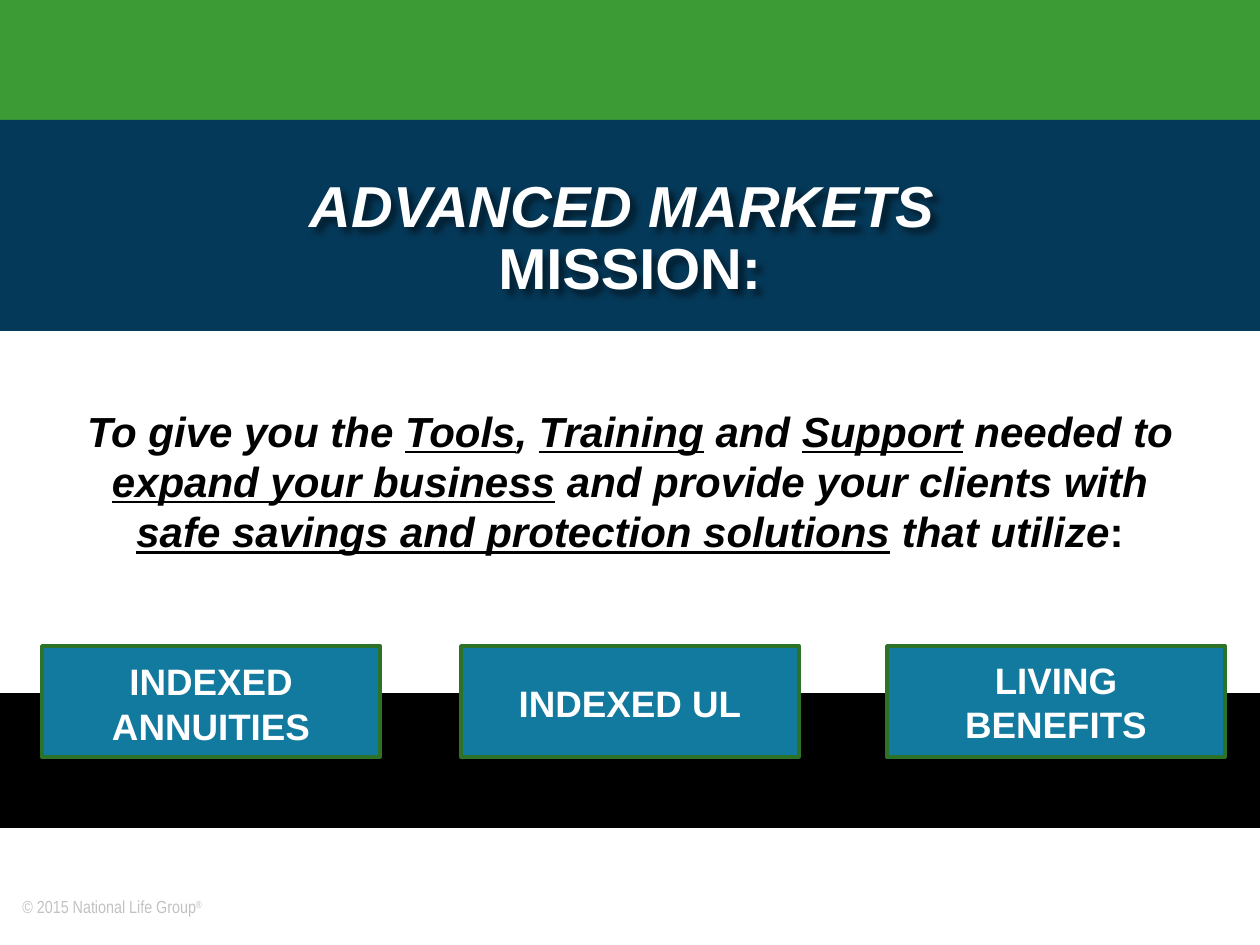
from lxml.etree import SubElement
from pptx import Presentation
from pptx.dml.color import RGBColor
from pptx.enum.shapes import MSO_SHAPE
from pptx.enum.text import MSO_ANCHOR, MSO_AUTO_SIZE, PP_ALIGN
from pptx.oxml.ns import qn
from pptx.util import Emu, Pt

PX = 914400 / 126
WHITE, BLACK, GREY = "FFFFFF", "000000", "C2C2C2"
GREEN, NAVY, TEAL, DARK_GREEN = "3D9B35", "053959", "127A9E", "2D7327"

LABEL = {"name": "Arial", "size": Pt(21), "bold": True}
TITLE = {"name": "Arial", "size": Pt(33), "bold": True}
MISSION = {"name": "Arial", "size": Pt(24), "bold": True, "italic": True}
FOOTER = {"name": "Arial Narrow", "size": Pt(10)}

# Each span is its text and what differs from the format of its box
MISSION_SPANS = [
    ("To give you the ", {}),
    ("Tools", {"underline": True}),
    (", ", {}),
    ("Training", {"underline": True}),
    (" and ", {}),
    ("Support", {"underline": True}),
    (" needed to ", {}),
    ("expand your business", {"underline": True}),
    (" and provide your clients with ", {}),
    ("safe savings and protection solutions", {"underline": True}),
    (" that utilize", {}),
    (":", {"italic": False}),
]

# Solution card left edge, then the place and lines of its label
CARDS = [
    (42, (98, 653, 226, 102), ["INDEXED", "ANNUITIES"], False),
    (461, (505, 675, 250, 57), ["INDEXED UL"], False),
    (887, (951, 652, 210, 102), ["LIVING", "BENEFITS"], True),
]


def px(*lengths):
    return [Emu(round(length * PX)) for length in lengths]


def color(value):
    return RGBColor.from_string(value)


def add_panel(page, place, fill, line=None):
    panel = page.shapes.add_shape(MSO_SHAPE.RECTANGLE, *px(*place))
    panel.shadow.inherit = False
    panel.fill.solid()
    panel.fill.fore_color.rgb = color(fill)
    if line:
        panel.line.color.rgb = color(line)
        panel.line.width = Pt(2)
    else:
        panel.line.fill.background()
    return panel


def add_text(page, place, paragraphs, style, ink, align=PP_ALIGN.CENTER,
             wrap=True, spacing=None, anchor=MSO_ANCHOR.TOP,
             auto_size=MSO_AUTO_SIZE.SHAPE_TO_FIT_TEXT):
    box = page.shapes.add_textbox(*px(*place))
    frame = box.text_frame
    frame.word_wrap = wrap
    frame.auto_size = auto_size
    frame.vertical_anchor = anchor
    for index, spans in enumerate(paragraphs):
        para = frame.add_paragraph() if index else frame.paragraphs[0]
        para.alignment = align
        if spacing:
            para.line_spacing = spacing
        for text, changes in spans:
            span = para.add_run()
            span.text = text
            for name, value in {**style, **changes}.items():
                setattr(span.font, name, value)
            span.font.color.rgb = color(ink)
    return box


def add_soft_shadow(box):
    effects = SubElement(box.element.spPr, qn("a:effectLst"))
    shadow = SubElement(effects, qn("a:outerShdw"), blurRad="50800",
                        dist="50800", dir="2700000", algn="tl")
    ink = SubElement(shadow, qn("a:srgbClr"), val=BLACK)
    SubElement(ink, qn("a:alpha"), val="50000")


def add_footer(page):
    box = add_text(page, (10, 890, 260, 34),
                   [[("© 2015 National Life Group", {}), ("®", {})]],
                   FOOTER, GREY, PP_ALIGN.LEFT, anchor=MSO_ANCHOR.MIDDLE)
    mark = box.text_frame.paragraphs[0].runs[-1]
    mark.font._element.set("baseline", "30000")


def add_card(page, left, place, lines, wrap):
    add_panel(page, (left, 646, 338, 111), TEAL, DARK_GREEN)
    return place, [[(line, {})] for line in lines], wrap


def main():
    deck = Presentation()
    deck.slide_width, deck.slide_height = px(1260, 945)
    page = deck.slides.add_slide(deck.slide_layouts[6])

    # Footer and full-width bands
    add_footer(page)
    add_panel(page, (0, 0, 1260, 181), GREEN)
    add_panel(page, (0, 693, 1260, 135), BLACK)
    add_panel(page, (0, 120, 1260, 211), NAVY)

    # Title and mission
    title = add_text(page, (296, 171, 668, 132),
                     [[("ADVANCED MARKETS ", {"italic": True})],
                      [("MISSION:", {})]],
                     TITLE, WHITE, spacing=0.9, auto_size=MSO_AUTO_SIZE.NONE)
    add_soft_shadow(title)
    add_text(page, (69, 399, 1122, 165), [MISSION_SPANS], MISSION, BLACK)

    # Solution cards, then their labels on top
    labels = [add_card(page, *card) for card in CARDS]
    for place, paragraphs, wrap in labels:
        add_text(page, place, paragraphs, LABEL, WHITE, wrap=wrap)

    deck.save("out.pptx")


if __name__ == "__main__":
    main()
